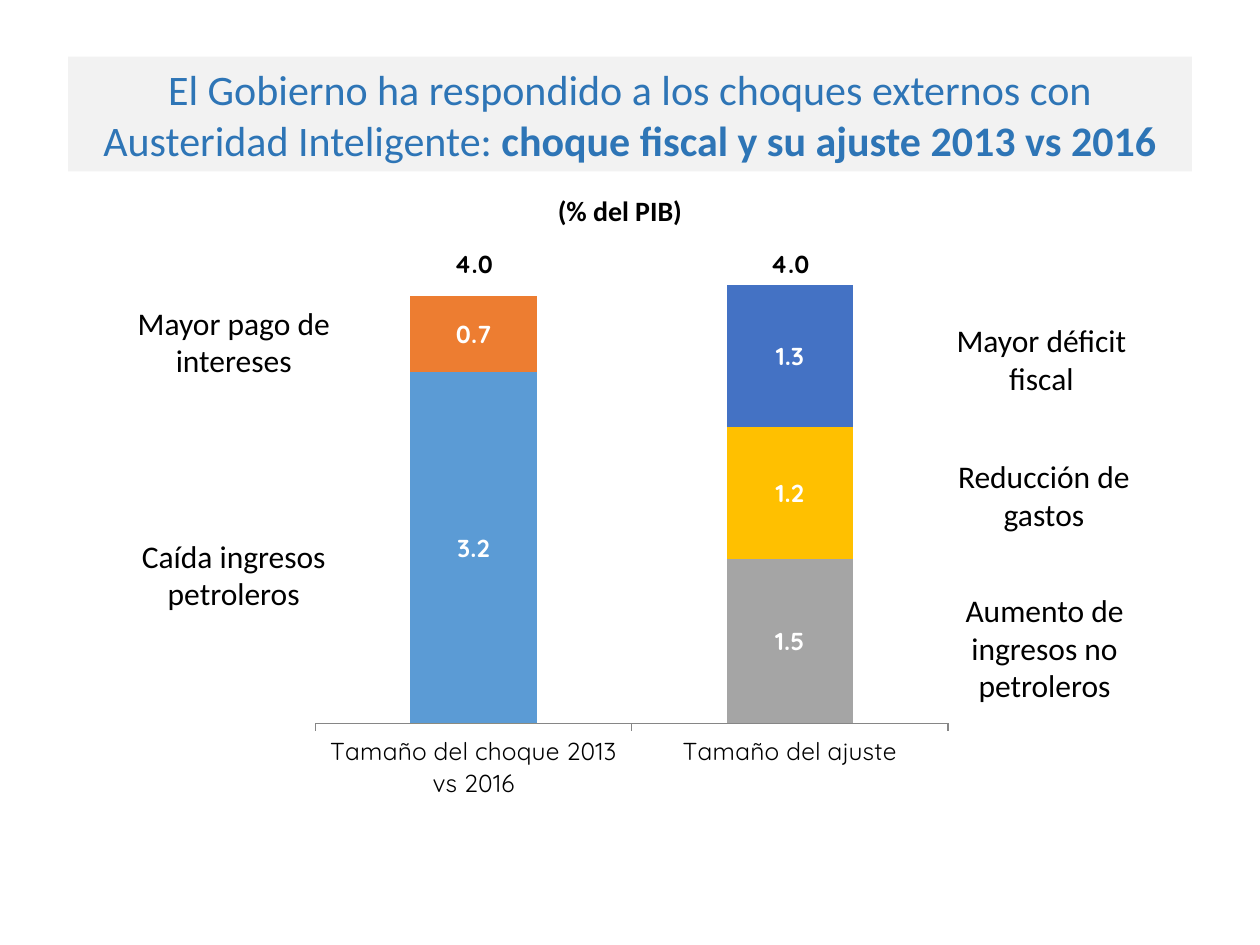
"""Build the slide on the fiscal shock and its adjustment, 2013 vs 2016."""
from lxml import etree
from pptx import Presentation
from pptx.chart.data import CategoryChartData
from pptx.dml.color import RGBColor
from pptx.enum.chart import XL_CHART_TYPE, XL_LABEL_POSITION, XL_MARKER_STYLE, XL_TICK_MARK
from pptx.enum.text import MSO_ANCHOR, PP_ALIGN
from pptx.oxml import parse_xml
from pptx.oxml.ns import qn
from pptx.util import Inches, Pt

STACKED = XL_CHART_TYPE.COLUMN_STACKED
ABOVE = XL_LABEL_POSITION.ABOVE
NO_MARKER = XL_MARKER_STYLE.NONE
TICK_OUT, TICK_NONE = XL_TICK_MARK.OUTSIDE, XL_TICK_MARK.NONE
CENTER, MIDDLE = PP_ALIGN.CENTER, MSO_ANCHOR.MIDDLE
CHART_NS = "http://schemas.openxmlformats.org/drawingml/2006/chart"
LABEL_FORMAT = "#,##0.0"


def style_font(font, size, color, bold=False, name="Calibri"):
    font.name, font.size, font.bold = name, Pt(size), bold
    font.color.rgb = RGBColor.from_string(color)


deck = Presentation()
deck.slide_width, deck.slide_height = Inches(10), Inches(7.5)
page = deck.slides.add_slide(deck.slide_layouts[5])

title = page.shapes.title
title.left, title.top, title.width, title.height = [Inches(v) for v in (0.54, 0.45, 8.92, 0.91)]
title.fill.solid()
title.fill.fore_color.rgb = RGBColor.from_string("F2F2F2")
title.text_frame.vertical_anchor = MIDDLE
para = title.text_frame.paragraphs[0]
para.alignment = CENTER
for text, bold in (
    ("El Gobierno ha respondido a los choques externos con Austeridad Inteligente: ", False),
    ("choque fiscal y su ajuste 2013 vs 2016", True),
):
    span = para.add_run()
    span.text = text
    style_font(span.font, 24, "2E75B6", bold)

series_rows = [
    ("Series 1", (0, 1.5), "A5A5A5"),
    ("Series 2", (0, 1.2), "FFC000"),
    ("Series 3", (0, 1.3), "4472C4"),
    ("Series 4", (3.2, 0), "5B9BD5"),
    ("Series 5", (0.7, 0), "ED7D31"),
    ("Series 6", (4, 4), "70AD47"),
]
chart_data = CategoryChartData(number_format=LABEL_FORMAT)
chart_data.categories = ["Tamaño del choque 2013 vs 2016", "Tamaño del ajuste"]
for name, values, color in series_rows:
    chart_data.add_series(name, values)
chart = page.shapes.add_chart(
    STACKED, Inches(2.4), Inches(1.68), Inches(5.23), Inches(4.78), chart_data
).chart
chart.has_title = chart.has_legend = False
style_font(chart.font, 14, "FFFFFF", True, "Quicksand")

category_axis = chart.category_axis
category_axis.major_tick_mark, category_axis.minor_tick_mark = TICK_OUT, TICK_NONE
category_axis.format.line.color.rgb = RGBColor.from_string("868686")
style_font(category_axis.tick_labels.font, 14, "000000", name="Quicksand")
value_axis = chart.value_axis
value_axis.minimum_scale, value_axis.maximum_scale = 0, 4.5
value_axis.has_major_gridlines = False
value_axis.visible = False

columns = chart.plots[0]
columns.gap_width, columns.overlap = 150, 100
columns.vary_by_categories = False

column_xml = chart.element.find(f".//{qn('c:barChart')}")
line_xml = parse_xml(
    f'<c:lineChart xmlns:c="{CHART_NS}"><c:grouping val="standard"/>'
    '<c:varyColors val="0"/><c:marker val="1"/></c:lineChart>'
)
total_xml = column_xml.findall(qn("c:ser"))[-1]
for bar_setting in total_xml.findall(qn("c:invertIfNegative")):
    total_xml.remove(bar_setting)
line_xml.insert(2, total_xml)
for axis_id in column_xml.findall(qn("c:axId")):
    etree.SubElement(line_xml, qn("c:axId")).set("val", axis_id.get("val"))
column_xml.addnext(line_xml)

plot_area = column_xml.getparent()
for old_layout in plot_area.findall(qn("c:layout")):
    plot_area.remove(old_layout)
plot_area.insert(0, parse_xml(
    f'<c:layout xmlns:c="{CHART_NS}"><c:manualLayout><c:layoutTarget val="inner"/>'
    '<c:xMode val="edge"/><c:yMode val="edge"/><c:x val="0.02"/><c:y val="0.03"/>'
    '<c:w val="0.96"/><c:h val="0.82"/></c:manualLayout></c:layout>'
))

all_series = [series for plot in chart.plots for series in plot.series]
for series, (name, values, color) in zip(all_series, series_rows):
    is_total = name == "Series 6"
    labels = series.data_labels
    labels.show_value = True
    labels.number_format, labels.number_format_is_linked = LABEL_FORMAT, False
    style_font(labels.font, 14, "000000" if is_total else "FFFFFF", True, "Quicksand")
    if is_total:
        labels.position = ABOVE
        series.format.line.fill.background()
        series.marker.style = NO_MARKER
        series.smooth = False
        continue
    series.format.fill.solid()
    series.format.fill.fore_color.rgb = RGBColor.from_string(color)
    hidden_label = parse_xml(
        f'<c:dLbl xmlns:c="{CHART_NS}"><c:idx val="{values.index(0)}"/>'
        '<c:delete val="1"/></c:dLbl>'
    )
    series.data_labels._element.insert(0, hidden_label)

for text, left, top, width, height, size, bold in (
    ("(% del PIB)", 2.11, 1.49, 5.62, 0.37, 16, True),
    ("Mayor pago de intereses", 0.83, 2.36, 2.05, 0.71, 18, False),
    ("Caída ingresos petroleros", 0.83, 4.21, 2.05, 0.71, 18, False),
    ("Mayor déficit fiscal", 7.24, 2.5, 2.05, 0.71, 18, False),
    ("Reducción de gastos", 7.26, 3.58, 2.05, 0.71, 18, False),
    ("Aumento de ingresos no petroleros", 7.15, 4.64, 2.28, 1.01, 18, False),
):
    box = page.shapes.add_textbox(Inches(left), Inches(top), Inches(width), Inches(height))
    box.text_frame.word_wrap = True
    box.text_frame.text = text
    para = box.text_frame.paragraphs[0]
    para.alignment = CENTER
    style_font(para.runs[0].font, size, "000000", bold)

deck.save("out.pptx")
